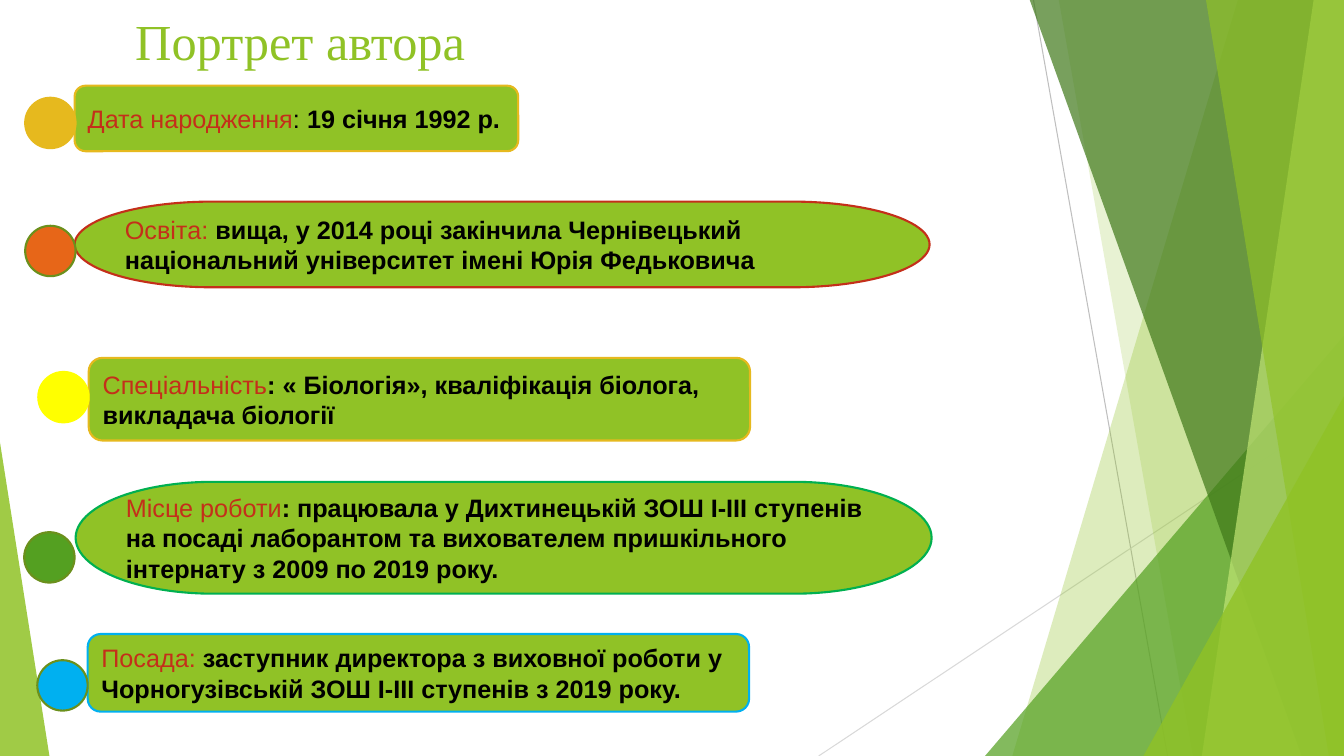
"""Builds the author portrait slide with its faceted green backdrop."""
from dataclasses import dataclass

from lxml.etree import SubElement
from pptx import Presentation
from pptx.dml.color import RGBColor
from pptx.enum.shapes import MSO_CONNECTOR, MSO_SHAPE
from pptx.enum.text import MSO_ANCHOR, MSO_AUTO_SIZE, PP_ALIGN
from pptx.oxml.ns import qn
from pptx.util import Pt

EMU_PER_PX = 9144
SLIDE_WIDTH, SLIDE_HEIGHT = 1333, 750
BACKDROP_TOP = -1
MARKER_SIZE = 50

COLORS = {
    "green": "90C226",
    "leaf": "54A021",
    "forest": "3F7819",
    "lime": "C0E474",
    "olive": "6B901C",
    "gold": "E6B91E",
    "red": "C42F1A",
    "orange": "E76618",
    "yellow": "FFFF00",
    "emerald": "00B050",
    "sky": "00B0F0",
    "black": "000000",
    "gray": "BFBFBF",
    "pale_gray": "D9D9D9",
}


@dataclass(frozen=True)
class Ray:
    start: tuple[int, int]
    end: tuple[int, int]
    color: str


@dataclass(frozen=True)
class Facet:
    """A band from the slide's right edge to a slanted left edge."""
    top_x: int
    bottom_x: int
    color: str
    opacity: int


@dataclass(frozen=True)
class Corner:
    box: tuple[int, int, int, int]
    apex: float
    color: str
    opacity: int


@dataclass(frozen=True)
class Fact:
    label: str
    details: tuple[str, ...]
    outline: MSO_SHAPE
    box: tuple[int, int, int, int]
    border: str
    marker_at: tuple[int, int]
    marker_fill: str
    marker_border: str = "olive"
    separator: str = ""


RAYS = [
    Ray((1025, 0), (1158, 750), "gray"),
    Ray((1333, 403), (812, 750), "pale_gray"),
]
BACKDROP = [
    Facet(1228, 1004, "green", 30),
    Facet(1050, 1183, "green", 20),
    Corner((977, 333, 356, 417), 1, "leaf", 72),
    Facet(1021, 1291, "forest", 70),
    Facet(1303, 1192, "lime", 70),
    Facet(1196, 1318, "green", 65),
    Corner((1134, 393, 199, 357), 1, "green", 80),
    Corner((0, 439, 49, 311), 0, "green", 85),
]
FACTS = [
    Fact("Дата народження", ("19 січня 1992 р.",), MSO_SHAPE.ROUNDED_RECTANGLE,
         (74, 85, 440, 65), "gold", (25, 97), "gold", "gold", separator=": "),
    Fact("Освіта: ",
         ("вища, у 2014 році закінчила Чернівецький національний університет "
          "імені Юрія Федьковича",),
         MSO_SHAPE.FLOWCHART_TERMINATOR, (74, 200, 848, 85), "red", (25, 224), "orange"),
    Fact("Спеціальність", (": « Біологія», кваліфікація біолога, викладача біології",),
         MSO_SHAPE.ROUNDED_RECTANGLE, (88, 355, 656, 82), "gold",
         (38, 369), "yellow", "yellow"),
    Fact("Місце роботи",
         (": працювала у Дихтинецькій ЗОШ I-III ступенів на посаді лаборантом та "
          "вихователем пришкільного інтернату з 2009 по 2019 року.",),
         MSO_SHAPE.FLOWCHART_TERMINATOR, (75, 478, 849, 111), "emerald", (24, 528), "leaf"),
    Fact("Посада: ",
         ("заступник директора з виховної роботи у",
          "Чорногузівській ЗОШ I-III ступенів з 2019 року."),
         MSO_SHAPE.ROUNDED_RECTANGLE, (87, 629, 656, 77), "sky", (37, 655), "sky"),
]


def px(*lengths: int) -> list[int]:
    """Turn pixel lengths into EMU."""
    return [length * EMU_PER_PX for length in lengths]


def rgb(name: str) -> RGBColor:
    """Look up a palette colour."""
    return RGBColor.from_string(COLORS[name])


def write(paragraph, text: str, *, color: str = "black", size: int = 18,
          font: str = "Arial", bold: bool = False) -> None:
    """Append a formatted run to a left-aligned paragraph."""
    paragraph.alignment = PP_ALIGN.LEFT
    run = paragraph.add_run()
    run.text = text
    run.font.name = font
    run.font.size = Pt(size)
    run.font.bold = bold
    run.font.color.rgb = rgb(color)


def paint(shape, fill: str, border: str | None = None, opacity: int = 100) -> None:
    """Set the fill, its opacity and the border of a shape."""
    shape.shadow.inherit = False
    shape.fill.solid()
    shape.fill.fore_color.rgb = rgb(fill)
    if opacity < 100:
        fill_color = next(shape.element.iter(qn("a:srgbClr")))
        SubElement(fill_color, qn("a:alpha"), val=str(opacity * 1000))
    if border:
        shape.line.color.rgb = rgb(border)
        shape.line.width = Pt(1.5)
    else:
        shape.line.fill.background()


def draw_ray(slide, ray: Ray) -> None:
    """Draw a thin backdrop line."""
    line = slide.shapes.add_connector(MSO_CONNECTOR.STRAIGHT, *px(*ray.start, *ray.end))
    line.line.color.rgb = rgb(ray.color)
    line.line.width = Pt(0.75)
    SubElement(line.element.spPr, qn("a:effectLst"))


def draw_backdrop_part(slide, part: Facet | Corner) -> None:
    """Draw a translucent facet or corner triangle."""
    if isinstance(part, Facet):
        builder = slide.shapes.build_freeform(part.top_x, BACKDROP_TOP, EMU_PER_PX)
        builder.add_line_segments([(SLIDE_WIDTH, BACKDROP_TOP), (SLIDE_WIDTH, SLIDE_HEIGHT),
                                   (part.bottom_x, SLIDE_HEIGHT)], close=True)
        shape = builder.convert_to_shape()
    else:
        shape = slide.shapes.add_shape(MSO_SHAPE.ISOSCELES_TRIANGLE, *px(*part.box))
        shape.adjustments[0] = part.apex
    paint(shape, part.color, opacity=part.opacity)


def draw_fact(slide, fact: Fact) -> None:
    """Draw a fact bar and its round marker."""
    bar = slide.shapes.add_shape(fact.outline, *px(*fact.box))
    paint(bar, "green", fact.border)
    frame = bar.text_frame
    frame.word_wrap = True
    frame.vertical_anchor = MSO_ANCHOR.MIDDLE
    paragraph = frame.paragraphs[0]
    write(paragraph, fact.label, color="red")
    if fact.separator:
        write(paragraph, fact.separator)
    write(paragraph, fact.details[0], bold=True)
    for detail in fact.details[1:]:
        write(frame.add_paragraph(), detail, bold=True)

    marker = slide.shapes.add_shape(MSO_SHAPE.FLOWCHART_CONNECTOR,
                                    *px(*fact.marker_at, MARKER_SIZE, MARKER_SIZE))
    paint(marker, fact.marker_fill, fact.marker_border)


def draw_title(slide, text: str) -> None:
    """Place and format the slide title."""
    title = slide.shapes.title
    title.left, title.top, title.width, title.height = px(124, 5, 940, 144)
    frame = title.text_frame
    frame.word_wrap = True
    frame.auto_size = MSO_AUTO_SIZE.NONE
    frame.vertical_anchor = MSO_ANCHOR.TOP
    write(frame.paragraphs[0], text, color="green", size=36, font="Times New Roman")


def main() -> None:
    """Build and save the slide."""
    presentation = Presentation()
    presentation.slide_width, presentation.slide_height = px(SLIDE_WIDTH, SLIDE_HEIGHT)
    slide = presentation.slides.add_slide(presentation.slide_layouts[5])
    for ray in RAYS:
        draw_ray(slide, ray)
    for part in BACKDROP:
        draw_backdrop_part(slide, part)
    draw_title(slide, "Портрет автора")
    for fact in FACTS:
        draw_fact(slide, fact)
    presentation.save("out.pptx")


if __name__ == "__main__":
    main()
